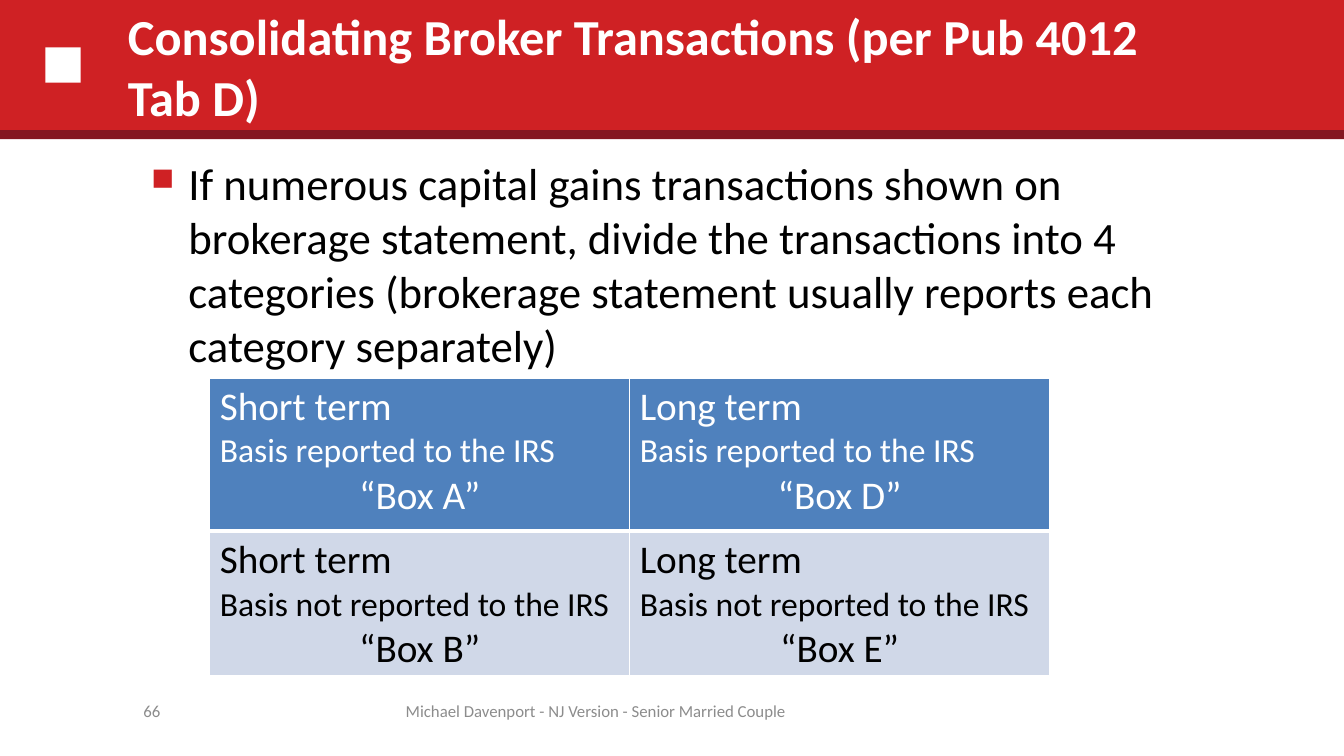
import pptx
import pptx.util
import pptx.dml.color
import pptx.enum.shapes
import pptx.enum.text
import pptx.oxml.ns
import lxml.etree
from dataclasses import dataclass

Inches, Pt = pptx.util.Inches, pptx.util.Pt
Align, Anchor = pptx.enum.text.PP_ALIGN, pptx.enum.text.MSO_ANCHOR


@dataclass(frozen=True)
class Theme:
    """Colours, font and type sizes of the slide."""
    red: str = "CF2124"
    dark: str = "841721"
    white: str = "FFFFFF"
    black: str = "000000"
    grey: str = "8C8C8C"
    blue: str = "4F81BD"
    pale: str = "D0D8E8"
    font: str = "Calibri"
    title: int = 36
    body: int = 32
    term: int = 28
    basis: int = 24
    foot: int = 12


THEME = Theme()
WIDTH, HEIGHT = 13.33, 7.5


def color(code):
    """Turn a hex code into a colour."""
    return pptx.dml.color.RGBColor.from_string(code)


def add_node(parent, tag, **attrs):
    """Append a drawing element to a parent."""
    node = lxml.etree.SubElement(parent, pptx.oxml.ns.qn(tag))
    for key, value in attrs.items():
        node.set(key, str(value))
    return node


def style(para, size, ink, align=Align.LEFT, bold=False):
    """Set the type of a paragraph."""
    para.alignment = align
    font = para.font
    font.name, font.size, font.bold = THEME.font, Pt(size), bold
    font.color.rgb = color(ink)


def add_block(slide, box, fill):
    """Draw a plain filled rectangle."""
    shape = slide.shapes.add_shape(
        pptx.enum.shapes.MSO_SHAPE.RECTANGLE, *map(Inches, box))
    shape.shadow.inherit = False
    shape.fill.solid()
    shape.fill.fore_color.rgb = color(fill)
    shape.line.fill.background()


def add_text(slide, box, text, size, ink, anchor=Anchor.MIDDLE, **look):
    """Place one wrapped paragraph and return it."""
    frame = slide.shapes.add_textbox(*map(Inches, box)).text_frame
    frame.word_wrap = True
    frame.vertical_anchor = anchor
    para = frame.paragraphs[0]
    para.text = text
    style(para, size, ink, **look)
    return para


def add_header(slide, box, title):
    """Draw the title band with its marker, edge and title."""
    left, top, width, height = box
    side = 0.35
    add_block(slide, box, THEME.red)
    add_block(slide, (left + 0.45, top + 0.48, side, side), THEME.white)
    add_block(slide, (left, top + height - 0.03, width, 0.09), THEME.dark)
    add_text(slide, (left + 1.17, top + 0.04, width * 0.8, height - 0.08),
             title, THEME.title, THEME.white, bold=True)


def add_body(slide, box, text):
    """Write the bulleted statement."""
    para = add_text(slide, box, text, THEME.body, THEME.black, Anchor.TOP)
    props = para._p.get_or_add_pPr()
    indent = Inches(0.37)
    props.set("marL", str(indent))
    props.set("indent", str(-indent))
    add_node(add_node(props, "a:buClr"), "a:srgbClr", val=THEME.red)
    add_node(props, "a:buSzPct", val=70000)
    add_node(props, "a:buChar", char="■")


def add_edges(cell, base):
    """Give a cell white borders, with its own base width."""
    props = cell._tc.get_or_add_tcPr()
    widths = {"a:lnL": 1, "a:lnR": 1, "a:lnT": 1, "a:lnB": base}
    for place, (tag, width) in enumerate(widths.items()):
        edge = add_node(props, tag, w=Pt(width))
        add_node(add_node(edge, "a:solidFill"), "a:srgbClr", val=THEME.white)
        props.insert(place, edge)


def fill_cell(cell, lines, fill, ink, base):
    """Write the term, basis and form box of one category."""
    cell.fill.solid()
    cell.fill.fore_color.rgb = color(fill)
    add_edges(cell, base)
    cell.text = "\n".join(lines)
    looks = ((THEME.term, Align.LEFT), (THEME.basis, Align.LEFT),
             (THEME.term, Align.CENTER))
    for para, (size, align) in zip(cell.text_frame.paragraphs, looks):
        style(para, size, ink, align)


def add_grid(slide, box, terms, bases, letters):
    """Build the table of terms across and bases down."""
    table = slide.shapes.add_table(
        len(bases), len(terms), *map(Inches, box)).table
    for row, height in zip(table.rows, (1.52, 1.4)):
        row.height = Inches(height)
    looks = ((THEME.blue, THEME.white, 3), (THEME.pale, THEME.black, 1))
    for down, (basis, look) in enumerate(zip(bases, looks)):
        for across, term in enumerate(terms):
            lines = term, basis, f"“Box {letters[down][across]}”"
            fill_cell(table.cell(down, across), lines, *look)


def add_footer(slide, box, number, text):
    """Write the slide number and the footer text."""
    left, top, width, height = box
    add_text(slide, (left, top, 1.02, height), number,
             THEME.foot, THEME.grey, align=Align.RIGHT)
    add_text(slide, (left + width - 4.22, top, 4.22, height), text,
             THEME.foot, THEME.grey, align=Align.CENTER)


def main():
    """Build and save the slide."""
    deck = pptx.Presentation()
    deck.slide_width, deck.slide_height = Inches(WIDTH), Inches(HEIGHT)
    slide = deck.slides.add_slide(deck.slide_layouts[6])
    add_header(slide, (0, -0.01, WIDTH, 1.33),
               "Consolidating Broker Transactions (per Pub 4012 Tab D)")
    add_footer(slide, (0.67, 6.85, 7.35, 0.4), "66",
               "Michael Davenport - NJ Version - Senior Married Couple")
    add_body(slide, (1.4, 1.5, WIDTH * 0.8, 5.17),
             "If numerous capital gains transactions shown on brokerage "
             "statement, divide the transactions into 4 categories (brokerage "
             "statement usually reports each category separately)")
    add_grid(slide, (2.08, 3.75, WIDTH * 0.625, 2.92),
             ("Short term", "Long term"),
             ("Basis reported to the IRS", "Basis not reported to the IRS"),
             ("AD", "BE"))
    deck.save("out.pptx")


if __name__ == "__main__":
    main()
